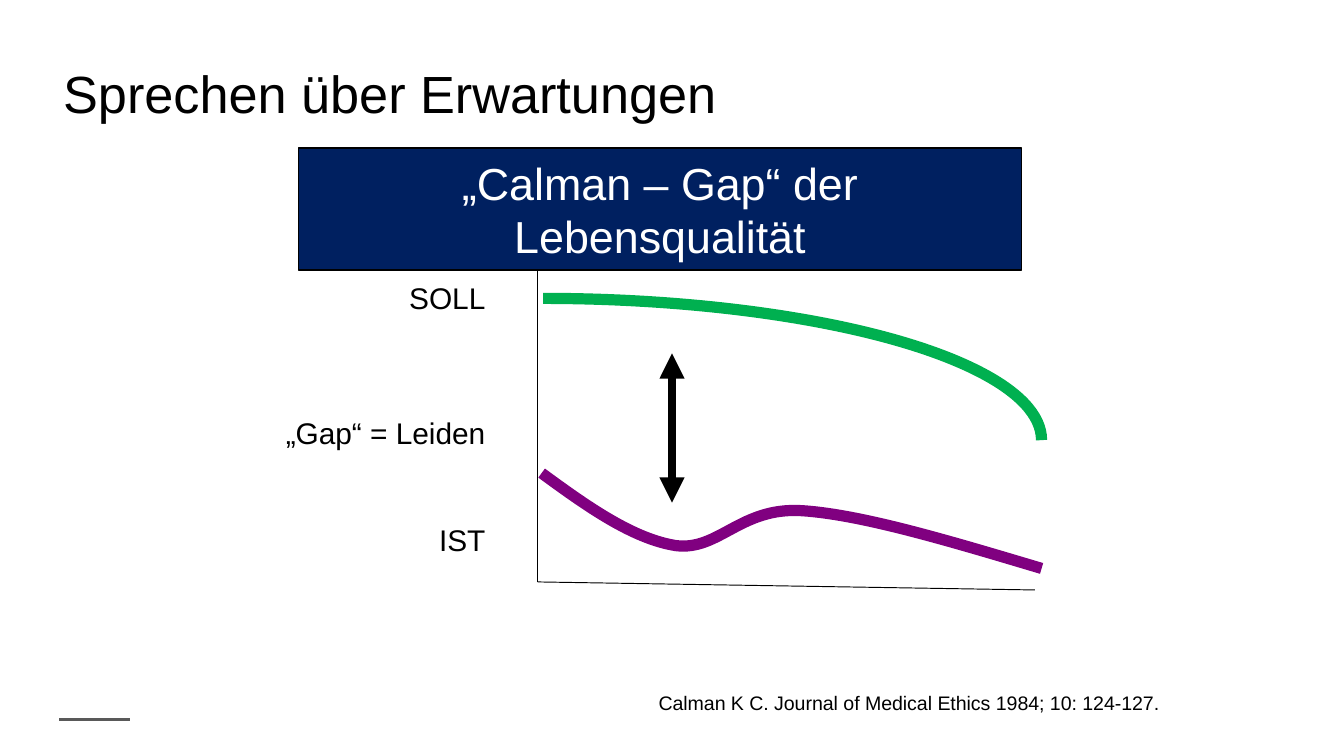
from dataclasses import dataclass

from lxml.etree import SubElement
from pptx import Presentation
from pptx.dml.color import RGBColor
from pptx.enum.shapes import MSO_CONNECTOR, MSO_SHAPE
from pptx.enum.text import MSO_ANCHOR, PP_ALIGN
from pptx.oxml.ns import qn
from pptx.util import Inches, Pt

BLACK = RGBColor(0x00, 0x00, 0x00)
WHITE = RGBColor(0xFF, 0xFF, 0xFF)
NAVY = RGBColor(0x00, 0x20, 0x60)
GREEN = RGBColor(0x00, 0xB0, 0x50)
PURPLE = RGBColor(0x80, 0x00, 0x80)
GRAY = RGBColor(0x59, 0x59, 0x59)
FONT = "Arial"
SLIDE_WIDTH = Inches(10)
SLIDE_HEIGHT = SLIDE_WIDTH * 9 // 16
UNIT = SLIDE_WIDTH // 100


@dataclass
class Box:
    """Region measured in grid columns and rows of a tenth of an inch."""
    column: float
    row: float
    columns: float
    rows: float

    def point(self, column, row):
        return round((self.column + column) * UNIT), round((self.row + row) * UNIT)

    def frame(self):
        return (*self.point(0, 0), round(self.columns * UNIT), round(self.rows * UNIT))

    def inner(self, column, row, columns, rows):
        return Box(self.column + column, self.row + row, columns, rows)


def format_paragraph(paragraph, size, color, alignment):
    paragraph.alignment = alignment
    for run in paragraph.runs:
        run.font.name = FONT
        run.font.size = Pt(size)
        run.font.color.rgb = color


def style_line(shape, color, width):
    shape.line.color.rgb = color
    shape.line.width = Pt(width)


def add_line(slide, start, end, color, width, double_arrow=False):
    connector = slide.shapes.add_connector(MSO_CONNECTOR.STRAIGHT, *start, *end)
    style_line(connector, color, width)
    if double_arrow:
        line = connector.line._get_or_add_ln()
        for tag in ("a:headEnd", "a:tailEnd"):
            SubElement(line, qn(tag), type="triangle")
    SubElement(connector._element.spPr, qn("a:effectLst"))


def add_text(slide, box, lines, size):
    text_frame = slide.shapes.add_textbox(*box.frame()).text_frame
    text_frame.word_wrap = True
    text_frame.text = "\n".join(lines)
    for paragraph in text_frame.paragraphs:
        format_paragraph(paragraph, size, BLACK, PP_ALIGN.RIGHT)
    return text_frame


def add_bezier(slide, points, color, width):
    builder = slide.shapes.build_freeform(*points[0])
    builder.add_line_segments(points[1:], close=False)
    shape = builder.convert_to_shape()
    segments = list(shape._element.iter(qn("a:lnTo")))
    for first, second, third in zip(segments[::3], segments[1::3], segments[2::3]):
        first.tag = qn("a:cubicBezTo")
        for segment in (second, third):
            first.append(segment[0])
            segment.getparent().remove(segment)
    shape.shadow.inherit = False
    shape.fill.background()
    style_line(shape, color, width)


def place_title(slide, box):
    title = slide.shapes.title
    title.left, title.top, title.width, title.height = box.frame()
    text_frame = title.text_frame
    text_frame.margin_left = text_frame.margin_right = 0
    text_frame.margin_top = text_frame.margin_bottom = 0
    text_frame.vertical_anchor = MSO_ANCHOR.TOP
    text_frame.text = "Sprechen über Erwartungen"
    text_frame.paragraphs[0].line_spacing = 0.9
    format_paragraph(text_frame.paragraphs[0], 28, BLACK, PP_ALIGN.LEFT)


def place_curves(slide, box):
    expectation = box.inner(-36.9, 2.3, 74.4, 21.1)
    arc = slide.shapes.add_shape(MSO_SHAPE.ARC, *expectation.frame())
    arc.adjustments[0] = 162.36
    arc.adjustments[1] = 0
    arc.shadow.inherit = False
    arc.fill.background()
    style_line(arc, GREEN, 6)

    reality = [(0.3, 15.3), (3.7, 17.8), (7.1, 20.2), (10.3, 20.7), (13.5, 21.1),
               (15.1, 17.8), (19.7, 18.1), (24.2, 18.4), (30.8, 20.4), (37.5, 22.4)]
    add_bezier(slide, [box.point(*point) for point in reality], PURPLE, 6)

    origin = box.point(0, 23.4)
    add_line(slide, box.point(0, 0), origin, BLACK, 0.5)
    add_line(slide, origin, box.point(37, 24), BLACK, 0.5)
    add_line(slide, box.point(10, 6.4), box.point(10, 17.5), BLACK, 4.5, double_arrow=True)


def place_labels(slide, box):
    text_frame = add_text(slide, box, ["SOLL", "„Gap“ = Leiden", "IST"], 16)
    for paragraph, space in zip(text_frame.paragraphs[1:], (53, 38.5)):
        paragraph.space_before = Pt(space)


def place_banner(slide, box):
    banner = slide.shapes.add_shape(MSO_SHAPE.RECTANGLE, *box.frame())
    banner.shadow.inherit = False
    banner.fill.solid()
    banner.fill.fore_color.rgb = NAVY
    style_line(banner, BLACK, 0.75)
    text_frame = banner.text_frame
    text_frame.word_wrap = True
    text_frame.margin_left = text_frame.margin_right = Inches(0.15)
    text_frame.text = "„Calman – Gap“ der Lebensqualität"
    format_paragraph(text_frame.paragraphs[0], 24, WHITE, PP_ALIGN.CENTER)


def place_footer(slide, box):
    add_line(slide, box.point(0, 2.6), box.point(5.3, 2.6), GRAY, 1.5)
    citation = "Calman K C. Journal of Medical Ethics 1984; 10: 124-127."
    add_text(slide, box.inner(16.7, 0, 66.2, 2.8), [citation], 10.5)


def main():
    presentation = Presentation()
    presentation.slide_width = SLIDE_WIDTH
    presentation.slide_height = SLIDE_HEIGHT
    slide = presentation.slides.add_slide(presentation.slide_layouts[5])
    place_title(slide, Box(4.7, 5.1, 90.6, 6.4))
    place_curves(slide, Box(40, 19.9, 37.5, 24))
    place_labels(slide, Box(16.3, 20.3, 20.8, 21.9))
    place_banner(slide, Box(22.2, 11, 53.8, 9.1))
    place_footer(slide, Box(4.4, 50.95, 82.9, 2.8))
    presentation.save("out.pptx")


if __name__ == "__main__":
    main()
